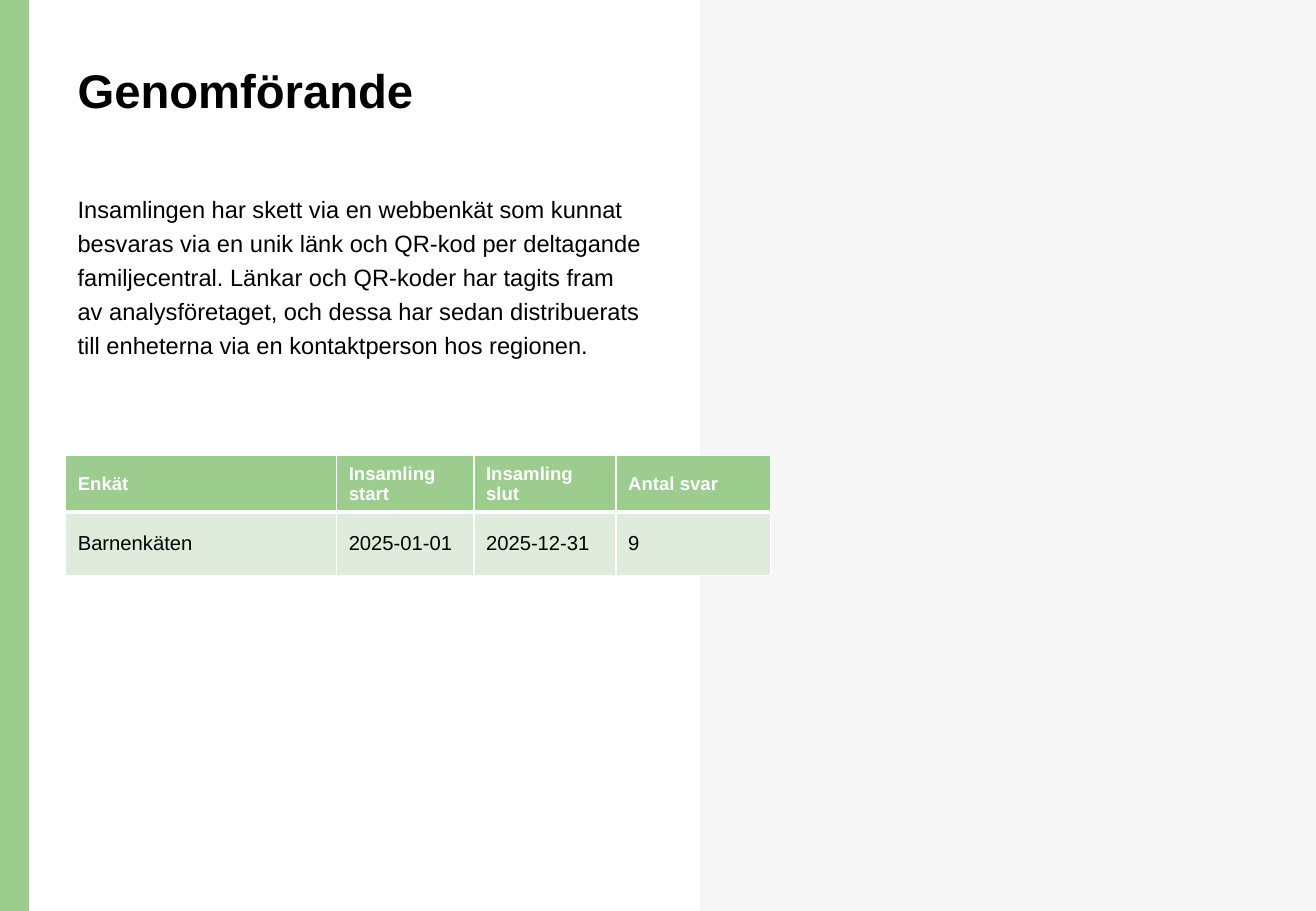
from lxml import etree
from pptx import Presentation
from pptx.dml.color import RGBColor
from pptx.enum import shapes, text
from pptx.oxml import ns
from pptx.util import Inches, Pt

# Content
TITLE = "Genomförande"
BODY = (
    "Insamlingen har skett via en webbenkät som kunnat besvaras via en unik "
    "länk och QR-kod per deltagande familjecentral. Länkar och QR-koder har "
    "tagits fram av analysföretaget, och dessa har sedan distribuerats till "
    "enheterna via en kontaktperson hos regionen."
)
SURVEYS = [
    ("Enkät", "Insamling start", "Insamling slut", "Antal svar"),
    ("Barnenkäten", "2025-01-01", "2025-12-31", "9"),
]
COLUMN_WIDTHS = [2.23, 1.13, 1.17, 1.27]
ROW_HEIGHTS = [0.39, 0.52]

# Style
FONT = "Arial"
GREEN, PALE_GREEN, GREY = "9DCC8F", "DFECDB", "F6F6F6"
BLACK, WHITE = "000000", "FFFFFF"
WIDTH, HEIGHT = 10.83, 7.5
MARGIN = 0.54


def color(value):
    return RGBColor.from_string(value)


def fill(part, value):
    part.fill.solid()
    part.fill.fore_color.rgb = color(value)


def write(frame, wording, size, value, bold=False, spacing=None):
    frame.text = wording
    paragraph = frame.paragraphs[0]
    paragraph.line_spacing = spacing
    font = paragraph.runs[0].font
    font.name, font.size, font.bold = FONT, Pt(size), bold
    font.color.rgb = color(value)


def add_panel(left, width, value):
    panel = slide.shapes.add_shape(
        shapes.MSO_SHAPE.RECTANGLE, Inches(left), 0, Inches(width), Inches(HEIGHT))
    panel.shadow.inherit = False
    fill(panel, value)
    panel.line.fill.background()


def add_text(top, width, height, *style, **options):
    frame = slide.shapes.add_textbox(
        Inches(MARGIN), Inches(top), Inches(width), Inches(height)).text_frame
    frame.word_wrap = True
    write(frame, *style, **options)
    return frame


def add_border(cell, side, points):
    line = etree.SubElement(
        cell._tc.get_or_add_tcPr(), ns.qn("a:ln" + side), w=str(Pt(points)))
    solid = etree.SubElement(line, ns.qn("a:solidFill"))
    etree.SubElement(solid, ns.qn("a:srgbClr"), val=WHITE)


prs = Presentation()
prs.slide_width, prs.slide_height = Inches(WIDTH), Inches(HEIGHT)
slide = prs.slides.add_slide(prs.slide_layouts[6])

# Background panels
add_panel(5.76, WIDTH - 5.76, GREY)
add_panel(0, 0.24, GREEN)

# Title and body
add_text(0.51, 9.71, 0.99, TITLE, 28, BLACK, bold=True, spacing=0.9)
body = add_text(1.51, 4.88, 5.28, BODY, 14, BLACK, spacing=1.2)
body.margin_right = Inches(0.13)

# Survey table
table = slide.shapes.add_table(
    len(SURVEYS), len(COLUMN_WIDTHS), Inches(MARGIN), Inches(3.75),
    Inches(sum(COLUMN_WIDTHS)), Inches(sum(ROW_HEIGHTS))).table
for column, width in zip(table.columns, COLUMN_WIDTHS):
    column.width = Inches(width)
for r, (survey, height) in enumerate(zip(SURVEYS, ROW_HEIGHTS)):
    table.rows[r].height = Inches(height)
    header = r == 0
    for c, wording in enumerate(survey):
        cell = table.cell(r, c)
        cell.vertical_anchor = text.MSO_ANCHOR.MIDDLE
        write(cell.text_frame, wording, 11 if header else 12,
              WHITE if header else BLACK, bold=header)
        # The edge between header and data is thicker
        for side in "LRTB":
            add_border(cell, side, 3 if side == ("B" if header else "T") else 1)
        fill(cell, GREEN if header else PALE_GREEN)

prs.save("out.pptx")
